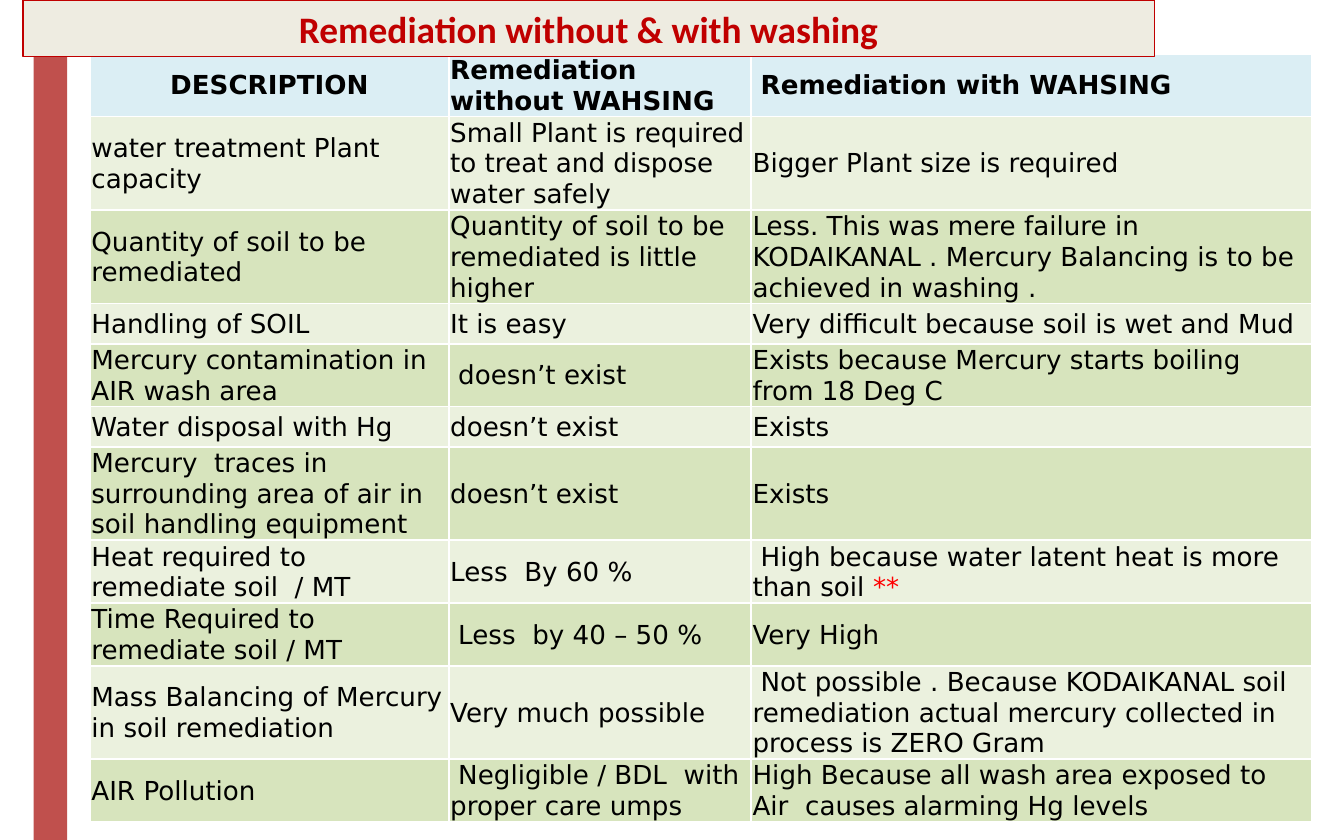
from pptx import Presentation
from pptx.dml.color import RGBColor
from pptx.enum import shapes, text
from pptx.util import Inches, Pt

COLUMN_WIDTHS = [2.67, 2.25, 4.17]
ROW_HEIGHTS = [0.43, 0.65, 0.65, 0.3, 0.43, 0.3, 0.65, 0.43, 0.43, 0.65, 0.43]
HEADER_FILL = "DBEEF4"
BAND_FILLS = ["D7E4BD", "EBF1DE"]
INDENTED_CELLS = {(0, 2), (4, 1), (7, 2), (8, 1), (9, 2), (10, 1)}
FOOTNOTE_MARK = "**"

COMPARISON = [
    ("DESCRIPTION", "Remediation without WAHSING", "Remediation with WAHSING"),
    ("water treatment Plant capacity",
     "Small Plant is required to treat and dispose water safely",
     "Bigger Plant size is required"),
    ("Quantity of soil to be remediated",
     "Quantity of soil to be remediated is little higher",
     "Less. This was mere failure in KODAIKANAL . Mercury Balancing is to be "
     "achieved in washing ."),
    ("Handling of SOIL", "It is easy",
     "Very difficult because soil is wet and Mud"),
    ("Mercury contamination in AIR wash area", "doesn’t exist",
     "Exists because Mercury starts boiling from 18 Deg C"),
    ("Water disposal with Hg", "doesn’t exist", "Exists"),
    ("Mercury  traces in surrounding area of air in soil handling equipment",
     "doesn’t exist", "Exists"),
    ("Heat required to remediate soil  / MT", "Less  By 60 %",
     "High because water latent heat is more than soil **"),
    ("Time Required to remediate soil / MT", "Less  by 40 – 50 %", "Very High"),
    ("Mass Balancing of Mercury in soil remediation", "Very much possible",
     "Not possible . Because KODAIKANAL soil remediation actual mercury "
     "collected in process is ZERO Gram"),
    ("AIR Pollution", "Negligible / BDL  with proper care umps",
     "High Because all wash area exposed to Air  causes alarming Hg levels"),
]


def color(value):
    return RGBColor.from_string(value)


def paint(target, value):
    target.fill.solid()
    target.fill.fore_color.rgb = color(value)


def format_font(font, name, size, value, bold):
    font.name = name
    font.size = Pt(size)
    font.bold = bold
    font.color.rgb = color(value)


def add_side_bar(page):
    bar = page.shapes.add_shape(shapes.MSO_SHAPE.RECTANGLE, Inches(0.25), 0,
                                Inches(0.25), Inches(6.25))
    bar.shadow.inherit = False
    paint(bar, "C0504D")
    bar.line.fill.background()


def fill_cell(cell, content, row, column):
    paint(cell, BAND_FILLS[row % 2] if row else HEADER_FILL)
    cell.vertical_anchor = text.MSO_ANCHOR.MIDDLE
    cell.margin_left = cell.margin_right = cell.margin_top = Inches(0.01)
    cell.margin_bottom = 0
    paragraph = cell.text_frame.paragraphs[0]
    if (row, column) in INDENTED_CELLS:
        paragraph._p.get_or_add_pPr().set("indent", str(Inches(0.06)))
    centered = (row, column) == (0, 0)
    paragraph.alignment = text.PP_ALIGN.CENTER if centered else text.PP_ALIGN.LEFT
    body, mark, _ = content.partition(FOOTNOTE_MARK)
    for words, value in ((body, "000000"), (mark, "FF0000")):
        if words:
            span = paragraph.add_run()
            span.text = words
            format_font(span.font, "DejaVu Sans", 14, value, row == 0)


def add_comparison_table(page):
    frame = page.shapes.add_table(
        len(ROW_HEIGHTS), len(COLUMN_WIDTHS), Inches(0.67), Inches(0.4),
        Inches(sum(COLUMN_WIDTHS)), Inches(sum(ROW_HEIGHTS)))
    table = frame.table
    for column, width in zip(table.columns, COLUMN_WIDTHS):
        column.width = Inches(width)
    for row, height in zip(table.rows, ROW_HEIGHTS):
        row.height = Inches(height)
    for row, contents in enumerate(COMPARISON):
        for column, content in enumerate(contents):
            fill_cell(table.cell(row, column), content, row, column)


def set_title(page):
    """Format the title and bring it in front of the table it overlaps."""
    title = page.shapes.title
    title.left, title.top = Inches(0.17), 0
    title.width, title.height = Inches(8.42), Inches(0.42)
    paint(title, "EEECE1")
    title.line.color.rgb = color("C00000")
    title.line.width = Pt(0.75)
    frame = title.text_frame
    frame.text = "Remediation without & with washing"
    frame.auto_size = text.MSO_AUTO_SIZE.NONE
    frame.vertical_anchor = text.MSO_ANCHOR.MIDDLE
    paragraph = frame.paragraphs[0]
    paragraph.alignment = text.PP_ALIGN.CENTER
    format_font(paragraph.runs[0].font, "Calibri", 20, "C00000", True)
    page.shapes._spTree.append(title._element)


def main():
    deck = Presentation()
    deck.slide_width, deck.slide_height = Inches(10), Inches(6.25)
    page = deck.slides.add_slide(deck.slide_layouts[5])
    add_side_bar(page)
    add_comparison_table(page)
    set_title(page)
    deck.save("out.pptx")


if __name__ == "__main__":
    main()
